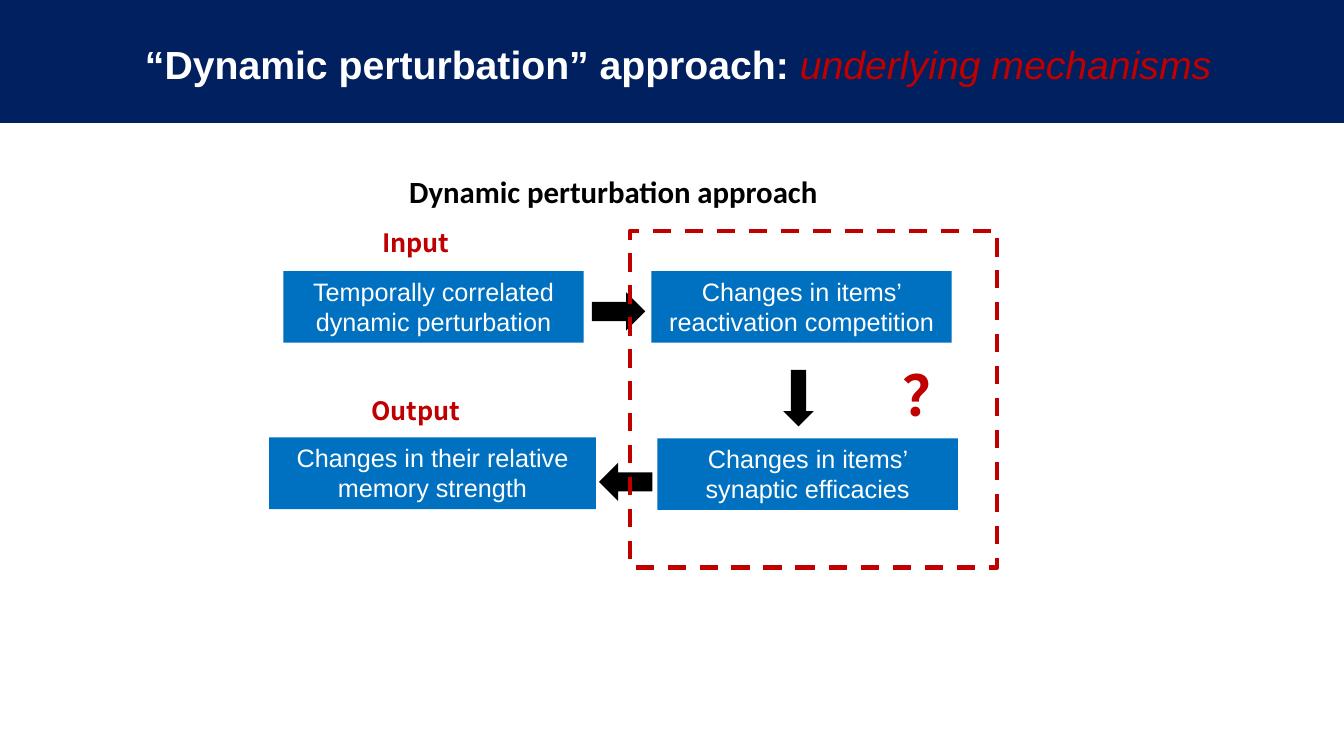
"""Build the slide on the mechanisms behind the dynamic perturbation approach."""
from lxml.etree import SubElement
from pptx import Presentation
from pptx.dml.color import RGBColor
from pptx.enum.dml import MSO_LINE as Dash
from pptx.enum.shapes import MSO_SHAPE as Shape
from pptx.enum.text import MSO_ANCHOR as Anchor, MSO_AUTO_SIZE as AutoSize, PP_ALIGN as Align
from pptx.oxml.ns import qn
from pptx.util import Pt

EMU_PER_PX = 9144
WIDTH, HEIGHT = 1333, 750
NAVY = RGBColor(0x00, 0x20, 0x60)
BLUE = RGBColor(0x00, 0x70, 0xC0)
RED = RGBColor(0xC0, 0x00, 0x00)
BLACK = RGBColor(0x00, 0x00, 0x00)
WHITE = RGBColor(0xFF, 0xFF, 0xFF)
CJK_FONT = "Noto Sans CJK SC"
TITLE_LAYOUT = 5


def px(length):
    return length * EMU_PER_PX


def write(para, text, size=18, color=WHITE, font="Arial", bold=False, italic=False,
          east_asian=None, align=Align.CENTER):
    para.alignment = align
    span = para.add_run()
    span.text = text
    span.font.size = Pt(size)
    span.font.name = font
    span.font.bold = bold
    span.font.italic = italic
    span.font.color.rgb = color
    if east_asian:
        SubElement(span.font._element, qn("a:ea"), typeface=east_asian)


class SlideBuilder:
    def __init__(self, page):
        self.page = page

    def set_frame(self, frame, anchor=Anchor.TOP):
        frame.word_wrap = True
        frame.auto_size = AutoSize.NONE
        frame.vertical_anchor = anchor
        frame.margin_left = frame.margin_right = px(10)
        frame.margin_top = frame.margin_bottom = px(5)
        return frame.paragraphs[0]

    def title(self, height, lead, emphasis):
        banner = self.page.shapes.title
        banner.left, banner.top = 0, 0
        banner.width, banner.height = px(WIDTH), px(height)
        banner.fill.solid()
        banner.fill.fore_color.rgb = NAVY
        para = self.set_frame(banner.text_frame, Anchor.MIDDLE)
        banner.text_frame.margin_left = px(22)
        banner.text_frame.margin_top = px(9)
        write(para, lead, size=28, bold=True)
        write(para, emphasis, size=28, color=RED, italic=True)

    def shape(self, kind, area, fill=None):
        shape = self.page.shapes.add_shape(kind, *map(px, area))
        shape.shadow.inherit = False
        shape.line.fill.background()
        if fill is None:
            shape.fill.background()
        else:
            shape.fill.solid()
            shape.fill.fore_color.rgb = fill
        return shape

    def step(self, area, text):
        box = self.shape(Shape.RECTANGLE, area, BLUE)
        write(self.set_frame(box.text_frame), text)

    def arrow(self, kind, area, rotation=0):
        self.shape(kind, area, BLACK).rotation = rotation

    def dashed_frame(self, area):
        line = self.shape(Shape.RECTANGLE, area).line
        line.color.rgb = RED
        line.width = Pt(3.25)
        line.dash_style = Dash.DASH

    def label(self, area, text, **style):
        box = self.page.shapes.add_textbox(*map(px, area))
        write(self.set_frame(box.text_frame), text, **style)


def main():
    deck = Presentation()
    deck.slide_width, deck.slide_height = px(WIDTH), px(HEIGHT)
    slide = SlideBuilder(deck.slides.add_slide(deck.slide_layouts[TITLE_LAYOUT]))

    slide.title(122, "“Dynamic perturbation” approach: ", "underlying mechanisms")
    for left, top, width, text in (
        (281, 269, 298, "Temporally correlated dynamic perturbation"),
        (646, 269, 298, "Changes in items’ reactivation competition"),
        (652, 435, 298, "Changes in items’ synaptic efficacies"),
        (267, 434, 324, "Changes in their relative memory strength"),
    ):
        slide.step((left, top, width, 71), text)
    slide.arrow(Shape.RIGHT_ARROW, (587, 290, 53, 38))
    slide.arrow(Shape.DOWN_ARROW, (777, 367, 30, 56))
    slide.arrow(Shape.RIGHT_ARROW, (594, 459, 53, 38), rotation=180)
    for top, text in ((221, "Input"), (387, "Output")):
        slide.label((302, top, 221, 40), text, color=RED, font=CJK_FONT, bold=True)
    slide.label((396, 166, 449, 47), "Dynamic perturbation approach", size=22,
                color=BLACK, font="Calibri", bold=True, align=Align.LEFT)
    slide.dashed_frame((625, 229, 364, 334))
    slide.label((885, 353, 101, 77), "？", size=40, color=RED, bold=True,
                east_asian=CJK_FONT, align=Align.LEFT)

    deck.save("out.pptx")


if __name__ == "__main__":
    main()
